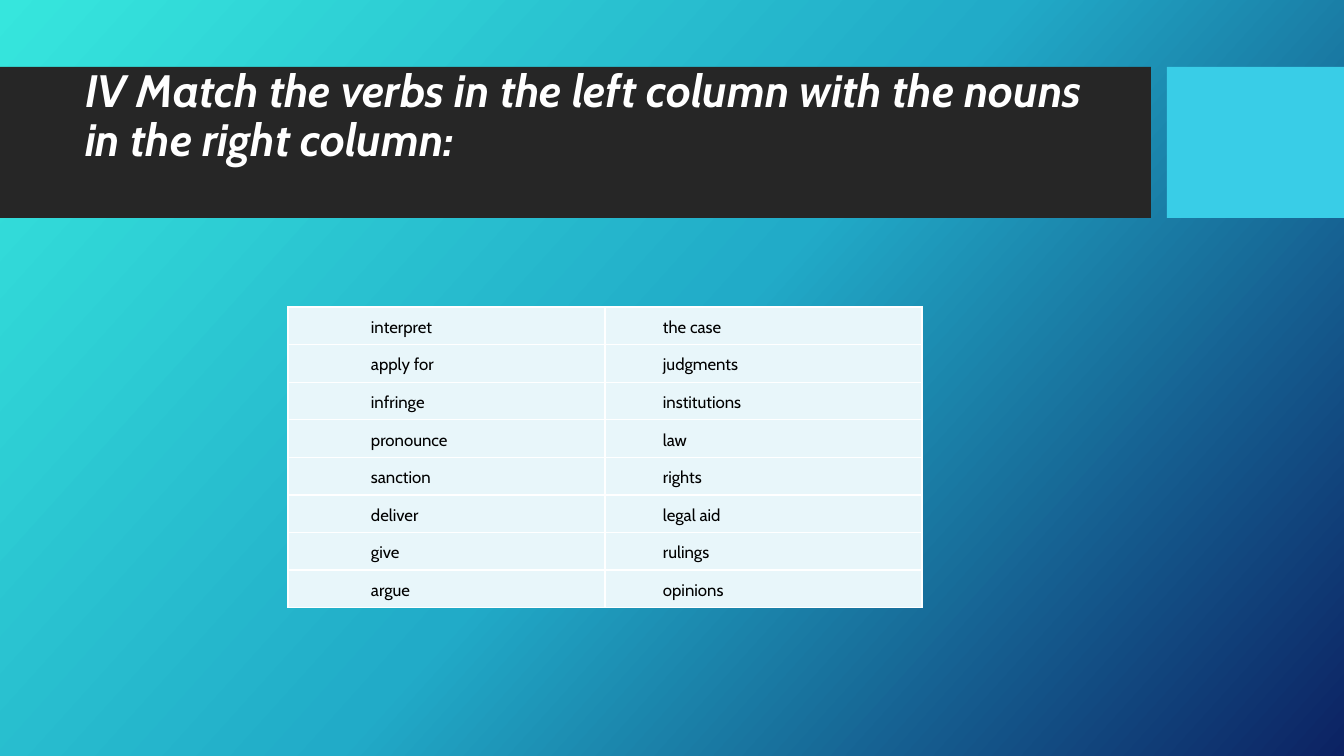
from copy import deepcopy
from lxml.etree import SubElement
from pptx import Presentation
from pptx.dml.color import RGBColor
from pptx.enum.shapes import MSO_SHAPE
from pptx.enum.text import MSO_ANCHOR, MSO_AUTO_SIZE, PP_ALIGN
from pptx.oxml.ns import qn
from pptx.util import Pt

TITLE = "IV Match the verbs in the left column with the nouns in the right column:"
PAIRS = [
    ("interpret", "the case"),
    ("apply for", "judgments"),
    ("infringe", "institutions"),
    ("pronounce", "law"),
    ("sanction", "rights"),
    ("deliver", "legal aid"),
    ("give", "rulings"),
    ("argue", "opinions"),
]
GRADIENT = [(0, "36E6DD"), (0.5, "21ABC8"), (1, "0C2263")]
BANDS = [((0, 67, 1151, 151), "262626"), ((1167, 67, 177, 151), "39CDE7")]
TITLE_BOX = (75, 83, 1059, 119)
TABLE_BOX = (288, 307, 634, 296)
COLUMNS = [{"marL": 101, "after": 0}, {"marL": 76, "after": 8}]
HANGING = -25
CELL_INSET = 7
TITLE_FONT = {"name": "Cabin", "size": Pt(32.4), "bold": True, "italic": True}
CELL_FONT = {"name": "Cabin", "size": Pt(12), "bold": False}


def px(n):
    return round(n * 914400 / 100.8)


def rgb(value):
    return RGBColor.from_string(value)


def set_all(obj, values):
    for name, value in values.items():
        setattr(obj, name, value)


def set_margins(obj, left, top, right, bottom):
    set_all(obj, {"margin_left": px(left), "margin_top": px(top),
                  "margin_right": px(right), "margin_bottom": px(bottom)})


def add_text(p, text, font, color):
    r = p.add_run()
    r.text = text
    set_all(r.font, font)
    r.font.color.rgb = rgb(color)


def add_borders(cell, color):
    tcPr = cell._tc.get_or_add_tcPr()
    for side in ("lnL", "lnR", "lnT", "lnB"):
        ln = SubElement(tcPr, qn("a:" + side), w=str(Pt(1)))
        fill = SubElement(ln, qn("a:solidFill"))
        SubElement(fill, qn("a:srgbClr"), val=color)


def fill_background(s):
    fill = s.background.fill
    fill.gradient()
    fill.gradient_angle = 360 - 42
    gs = fill._fill._gradFill.find(qn("a:gsLst"))
    gs.append(deepcopy(gs[0]))
    for stop, (position, color) in zip(fill.gradient_stops, GRADIENT):
        stop.position = position
        stop.color.rgb = rgb(color)


def add_bands(s):
    for box, color in BANDS:
        sp = s.shapes.add_shape(MSO_SHAPE.RECTANGLE, *map(px, box))
        sp.shadow.inherit = False
        sp.fill.solid()
        sp.fill.fore_color.rgb = rgb(color)
        sp.line.fill.background()


def add_title(s):
    sp = s.shapes.title
    s.shapes._spTree.append(sp._element)
    set_all(sp, dict(zip(("left", "top", "width", "height"), map(px, TITLE_BOX))))
    tf = sp.text_frame
    set_all(tf, {"word_wrap": True, "auto_size": MSO_AUTO_SIZE.NONE,
                 "vertical_anchor": MSO_ANCHOR.MIDDLE})
    set_margins(tf, 10, 5, 10, 55)
    p = tf.paragraphs[0]
    set_all(p, {"alignment": PP_ALIGN.LEFT, "line_spacing": 0.9})
    add_text(p, TITLE, TITLE_FONT, "FFFFFF")


def add_pairs(s):
    frame = s.shapes.add_table(len(PAIRS), len(COLUMNS), *map(px, TABLE_BOX))
    table = frame.table
    set_all(table, {"first_row": False, "horz_banding": False})
    for i, pair in enumerate(PAIRS):
        for j, (word, column) in enumerate(zip(pair, COLUMNS)):
            cell = table.cell(i, j)
            set_margins(cell, *[CELL_INSET] * 4)
            add_borders(cell, "FFFFFF")
            cell.fill.solid()
            cell.fill.fore_color.rgb = rgb("E8F6FA")
            p = cell.text_frame.paragraphs[0]
            pPr = p._p.get_or_add_pPr()
            pPr.set("marL", str(px(column["marL"])))
            pPr.set("indent", str(px(HANGING)))
            set_all(p, {"line_spacing": 1.15, "space_after": Pt(column["after"])})
            add_text(p, word, CELL_FONT, "000000")


def main():
    prs = Presentation()
    set_all(prs, {"slide_width": px(1344), "slide_height": px(756)})
    s = prs.slides.add_slide(prs.slide_layouts[5])
    fill_background(s)
    add_bands(s)
    add_title(s)
    add_pairs(s)
    prs.save("out.pptx")


if __name__ == "__main__":
    main()
